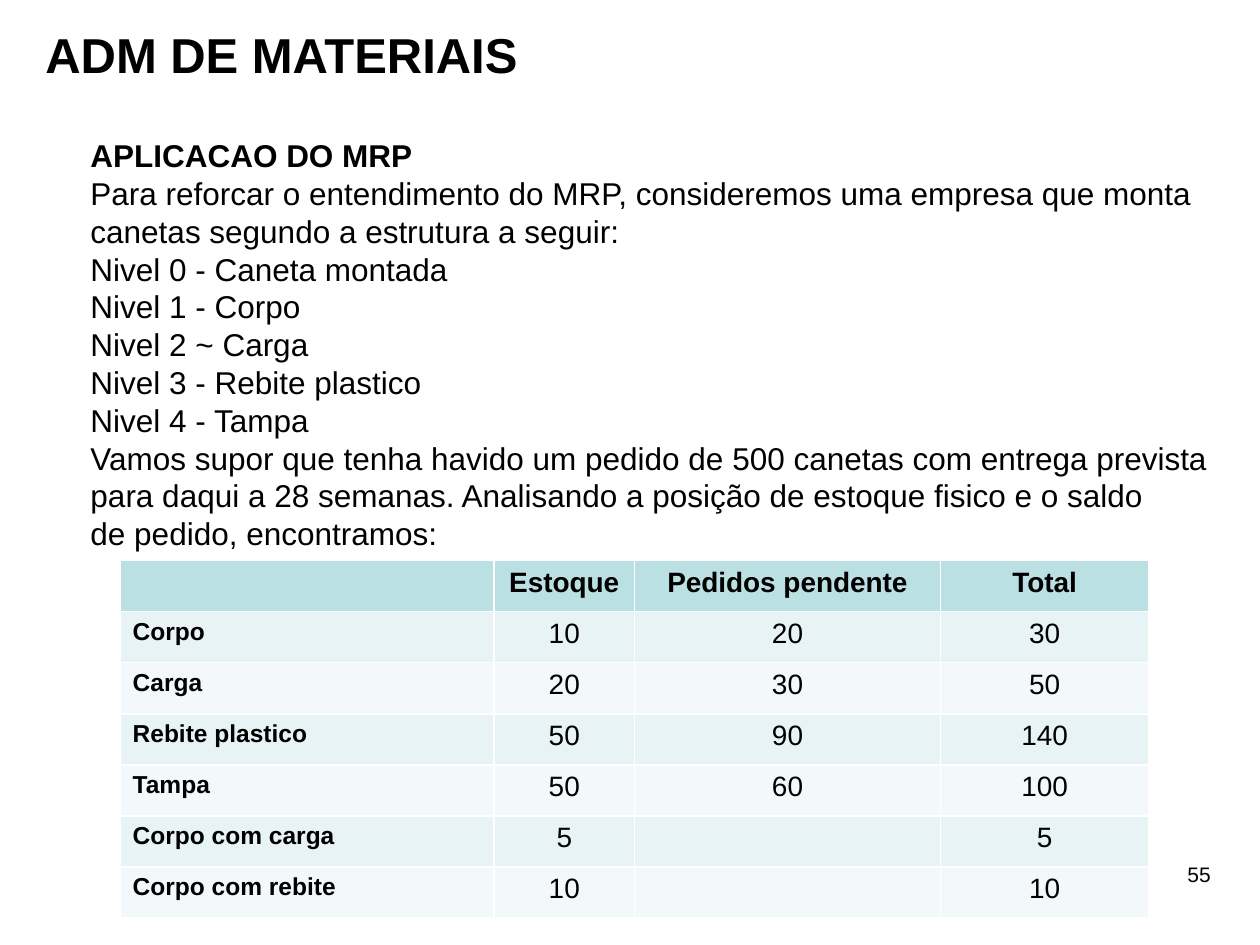
"""Build the MRP stock slide for the materials management course."""
from lxml import etree
from pptx import Presentation
from pptx import util as u
from pptx.dml import color
from pptx.enum import text
from pptx.oxml import ns

HUES = {"ink": "000000", "head": "BBE0E3", "odd": "E7F3F4", "even": "F3F9FA"}
LINES = [
    "APLICACAO DO MRP",
    "Para reforcar o entendimento do MRP, consideremos uma empresa que monta",
    "canetas segundo a estrutura a seguir:",
    "Nivel 0 - Caneta montada",
    "Nivel 1 - Corpo",
    "Nivel 2 ~ Carga",
    "Nivel 3 - Rebite plastico",
    "Nivel 4 - Tampa",
    "Vamos supor que tenha havido um pedido de 500 canetas com entrega prevista",
    "para daqui a 28 semanas. Analisando a posição de estoque fisico e o saldo",
    "de pedido, encontramos:",
]
STOCK = [
    ("", "Estoque", "Pedidos pendente", "Total"),
    ("Corpo", "10", "20", "30"),
    ("Carga", "20", "30", "50"),
    ("Rebite plastico", "50", "90", "140"),
    ("Tampa", "50", "60", "100"),
    ("Corpo com carga", "5", "", "5"),
    ("Corpo com rebite", "10", "", "10"),
]
WIDTHS = [7.54, 2.83, 6.17, 4.2]
LEFT, MID, RIGHT = text.PP_ALIGN.LEFT, text.PP_ALIGN.CENTER, text.PP_ALIGN.RIGHT


def style(para, size, bold=False, align=LEFT):
    para.alignment = align
    font = para.font
    font.name, font.size, font.bold = "Arial", u.Pt(size), bold
    font.color.rgb = color.RGBColor.from_string(HUES["ink"])


def place(box, left, top, width, height, anchor=text.MSO_ANCHOR.TOP):
    box.left, box.top, box.width, box.height = map(u.Cm, (left, top, width, height))
    frame = box.text_frame
    frame.auto_size = text.MSO_AUTO_SIZE.NONE
    frame.word_wrap = True
    frame.vertical_anchor = anchor
    return frame


deck = Presentation()
deck.slide_width, deck.slide_height = u.Cm(25.4), u.Cm(19.05)
slide = deck.slides.add_slide(deck.slide_layouts[1])

title = place(slide.shapes.title, 0.66, 0.36, 10.6, 1.45)
title.text = "ADM DE MATERIAIS"
style(title.paragraphs[0], 28, True)
title.paragraphs[0].line_spacing = u.Pt(33.6)

body = place(slide.placeholders[1], 1.57, 2.62, 23.1, 9.5)
body.text = "\n".join(LINES)
for row, para in enumerate(body.paragraphs):
    props = para._p.get_or_add_pPr()
    props.set("marL", "0")
    props.set("indent", "0")
    etree.SubElement(props, ns.qn("a:buNone"))
    para.space_before = u.Pt(0)
    para.line_spacing = u.Pt(21.6)
    style(para, 18, row == 0)

grid = slide.shapes.add_table(
    len(STOCK), len(WIDTHS), u.Cm(2.42), u.Cm(11.3), u.Cm(sum(WIDTHS)), u.Cm(7.21)
).table
for col, width in zip(grid.columns, WIDTHS):
    col.width = u.Cm(width)
for row, items in enumerate(STOCK):
    grid.rows[row].height = u.Cm(1.03)
    hue = "head" if row == 0 else "odd" if row % 2 else "even"
    for col, item in enumerate(items):
        cell = grid.cell(row, col)
        cell.text = item
        cell.fill.solid()
        cell.fill.fore_color.rgb = color.RGBColor.from_string(HUES[hue])
        style(cell.text_frame.paragraphs[0], 16 if col else 14,
              row == 0 or col == 0, MID if col else LEFT)

page = slide.shapes.add_textbox(0, 0, 0, 0)
number = place(page, 23.44, 16.99, 1.22, 1.02, text.MSO_ANCHOR.BOTTOM)
number.text = "55"
style(number.paragraphs[0], 12, align=RIGHT)

deck.save("out.pptx")
